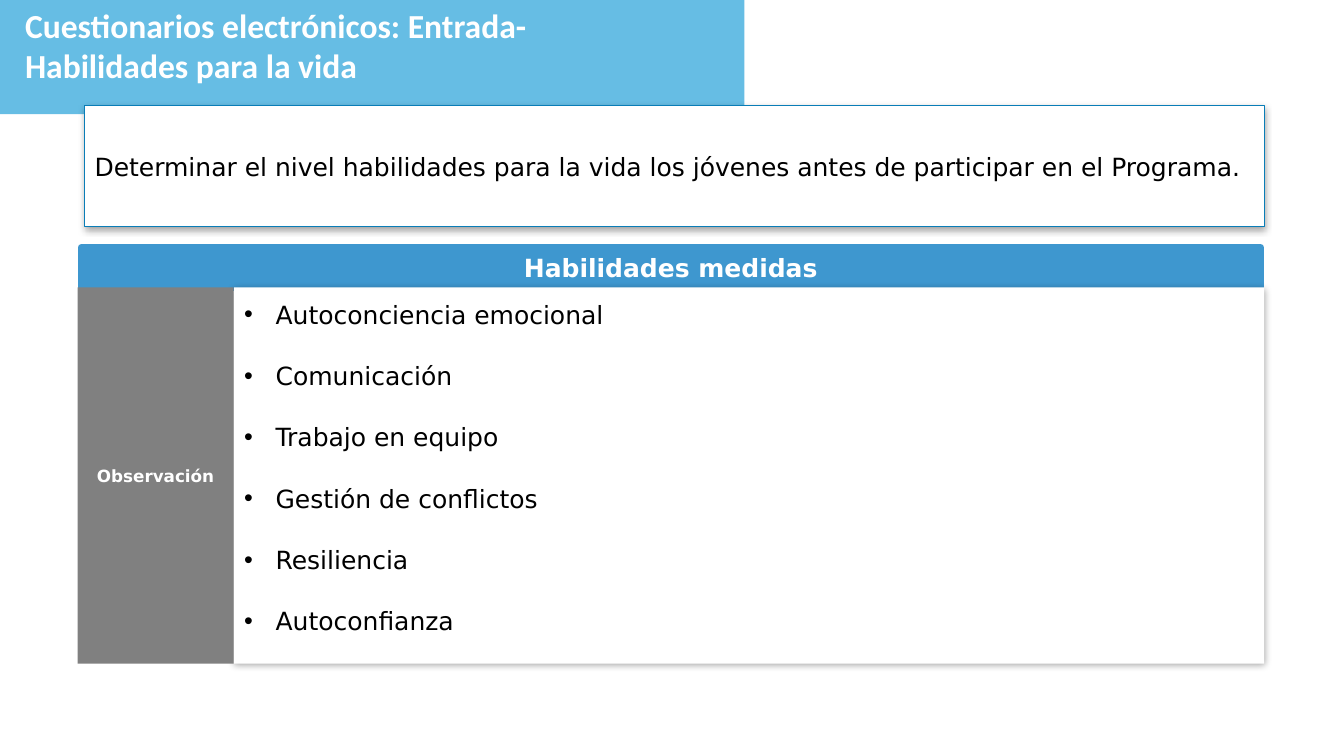
"""Build the slide on the entry questionnaire for life skills."""
import pptx
import pptx.util
import pptx.dml.color
import pptx.enum.shapes
import pptx.enum.text
import pptx.oxml
import pptx.oxml.ns

Pt = pptx.util.Pt
ANCHOR = pptx.enum.text.MSO_ANCHOR
ALIGN = pptx.enum.text.PP_ALIGN
NS = pptx.oxml.ns.nsdecls("a")


def color(hex_string):
    return pptx.dml.color.RGBColor.from_string(hex_string)


def write(shape, *lines, size=17.9, font="DejaVu Sans", ink="000000", bold=False,
          align=ALIGN.LEFT, anchor=ANCHOR.MIDDLE, bullet=False, gap=0):
    frame = shape.text_frame
    frame.word_wrap = True
    frame.vertical_anchor = anchor
    for index, line in enumerate(lines):
        paragraph = frame.paragraphs[0] if index == 0 else frame.add_paragraph()
        paragraph.text = line
        paragraph.alignment = align
        if bullet:
            properties = paragraph._p.get_or_add_pPr()
            properties.set("marL", str(Pt(22.5)))
            properties.set("indent", str(-Pt(22.5)))
            properties.append(pptx.oxml.parse_xml(f'<a:buFont {NS} typeface="Arial"/>'))
            properties.append(pptx.oxml.parse_xml(f'<a:buChar {NS} char="•"/>'))
        if index:
            paragraph.space_before = Pt(gap)
        paragraph.font.size = Pt(size)
        paragraph.font.name = font
        paragraph.font.bold = bold
        paragraph.font.color.rgb = color(ink)


presentation = pptx.Presentation()
presentation.slide_width = Pt(960.5)
presentation.slide_height = Pt(538.5)
slide = presentation.slides.add_slide(presentation.slide_layouts[6])

panels = []
for left, top, width, height, fill, line, line_width in [
    (0, 0, 532, 81.5, "0092D2", None, 0),
    (57.9, 176.7, 843, 28.6, "3E97CF", "3E97CF", 5),
    (167.4, 205.3, 736, 268.6, "FFFFFF", None, 0),
    (55.5, 205.3, 111.5, 268.6, "808080", None, 0),
    (60.5, 75.6, 843, 86, "FFFFFF", "097DB7", 0.75),
]:
    panel = slide.shapes.add_shape(pptx.enum.shapes.MSO_SHAPE.RECTANGLE,
                                   Pt(left), Pt(top), Pt(width), Pt(height))
    panel.shadow.inherit = False
    panel.fill.solid()
    panel.fill.fore_color.rgb = color(fill)
    if line:
        panel.line.color.rgb = color(line)
        panel.line.width = Pt(line_width)
    else:
        panel.line.fill.background()
    panels.append(panel)
title_band, skills_header, skills_list, observation, objective = panels

band_color = title_band._element.spPr.find(".//" + pptx.oxml.ns.qn("a:srgbClr"))
band_color.append(pptx.oxml.parse_xml(f'<a:alpha {NS} val="60000"/>'))

for raised in (skills_list, objective):
    effects = raised._element.spPr.find(pptx.oxml.ns.qn("a:effectLst"))
    effects.append(pptx.oxml.parse_xml(
        f'<a:outerShdw {NS} blurRad="{Pt(5)}" dist="{Pt(1.8)}" dir="5400000" rotWithShape="0">'
        '<a:srgbClr val="000000"><a:alpha val="35000"/></a:srgbClr></a:outerShdw>'))

write(skills_header, "Habilidades medidas", ink="FFFFFF", bold=True, align=ALIGN.CENTER)
skills_list.text_frame.margin_top = Pt(8.4)
write(skills_list, "Autoconciencia emocional", "Comunicación", "Trabajo en equipo",
      "Gestión de conflictos", "Resiliencia", "Autoconfianza",
      anchor=ANCHOR.TOP, bullet=True, gap=22.3)
write(observation, "Observación", size=12, ink="FFFFFF", bold=True, align=ALIGN.CENTER)
write(objective, "Determinar el nivel habilidades para la vida los jóvenes "
      "antes de participar en el Programa.")

title = slide.shapes.add_textbox(Pt(10.8), Pt(0), Pt(468.7), Pt(65.5))
write(title, "Cuestionarios electrónicos: Entrada- Habilidades para la vida",
      size=24, font="Calibri", ink="FFFFFF", bold=True, anchor=ANCHOR.TOP)

presentation.save("out.pptx")
